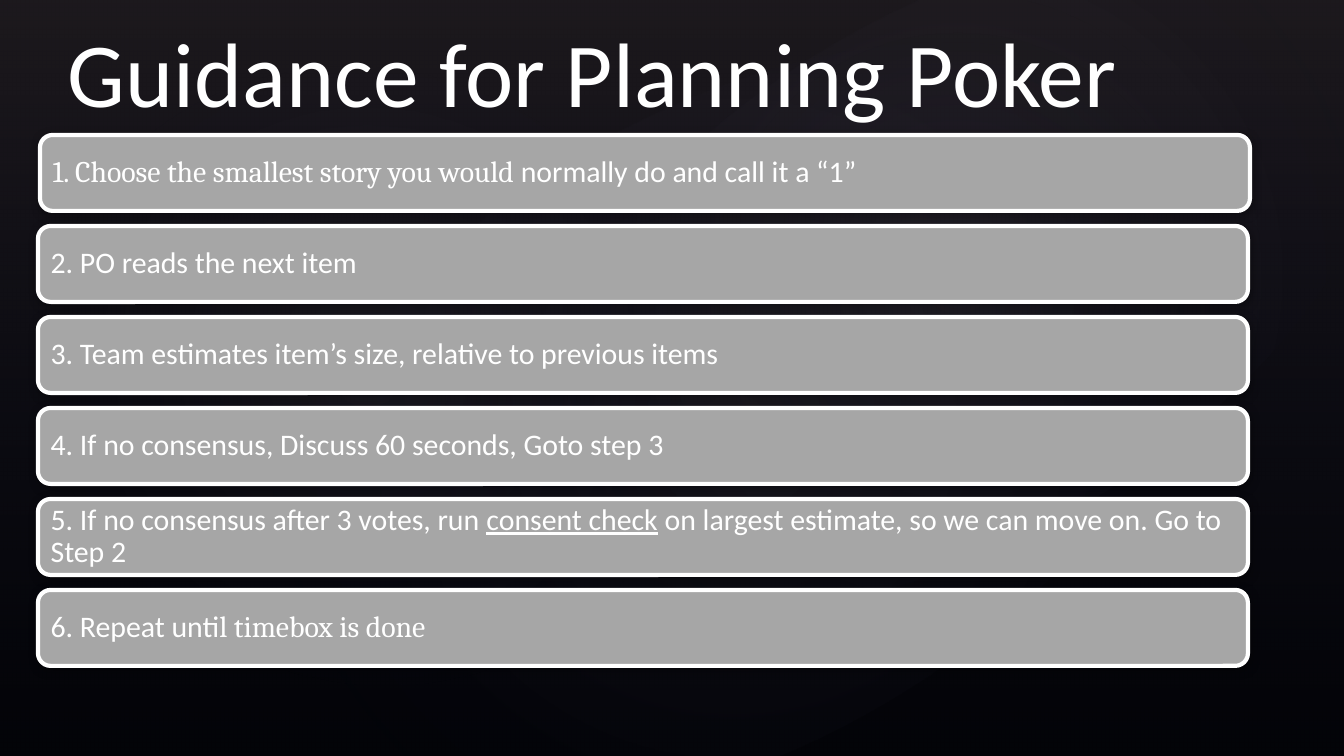
"""Build the slide with six steps of guidance for planning poker."""
from lxml import etree
from pptx import Presentation
from pptx.dml.color import RGBColor
from pptx.enum.shapes import MSO_SHAPE as Shape
from pptx.enum.text import MSO_ANCHOR as Anchor, PP_ALIGN as Align
from pptx.oxml import parse_xml
from pptx.oxml.ns import nsdecls, qn
from pptx.util import Emu, Pt

WHITE = RGBColor(0xFF, 0xFF, 0xFF)
GREY = RGBColor(0xA6, 0xA6, 0xA6)
BLACK = RGBColor(0, 0, 0)
SCALE = 9144000 / 1344
SERIF = {"name": "Cambria"}
SANS = {"name": "Calibri"}
UNDERLINED = {"name": "Calibri", "underline": True}


def px(*lengths):
    return [Emu(round(length * SCALE)) for length in lengths]


def add_glow(kind, place, stops, direction, angle=0):
    glow = page.shapes.add_shape(kind, *px(*place))
    glow.rotation = angle
    glow.shadow.inherit = False
    glow.line.fill.background()
    marks = "".join(
        f'<a:gs pos="{at * 1000}"><a:srgbClr val="{color}">'
        f'<a:alpha val="{alpha * 1000}"/></a:srgbClr></a:gs>'
        for at, color, alpha in stops)
    fill = parse_xml(f'<a:gradFill {nsdecls("a")} rotWithShape="1">'
                     f'<a:gsLst>{marks}</a:gsLst>{direction}</a:gradFill>')
    glow.element.spPr.find(qn("a:prstGeom")).addnext(fill)


deck = Presentation()
deck.slide_width, deck.slide_height = px(1344, 756)
page = deck.slides.add_slide(deck.slide_layouts[6])
page.background.fill.solid()
page.background.fill.fore_color.rgb = BLACK

add_glow(Shape.RECTANGLE, (0, 0, 1344, 756),
         [(0, "504652", 36), (100, "242852", 10)], '<a:lin ang="5400000" scaled="0"/>')
radial = ('<a:path path="circle"><a:fillToRect l="50000" t="50000" '
          'r="50000" b="50000"/></a:path>')
for place, angle, alpha in [
    ((202, 114, 1064, 629), 328.7, 7),
    ((62, 46, 610, 659), 294.3, 8),
    ((481, 13, 953, 524), 328.7, 8),
]:
    add_glow(Shape.OVAL, place, [(0, "C4BCC6", alpha), (58, "242852", 0)], radial, angle)

steps = [
    [("1. Choose the smallest story you would ", SERIF),
     ("normally do and call it a “1”", SANS)],
    [("2. PO reads the next item", SANS)],
    [("3. Team estimates item’s size, relative to previous items", SANS)],
    [("4. If no consensus, Discuss 60 seconds, Goto step 3", SANS)],
    [("5. If no consensus after 3 votes, run ", SANS),
     ("consent check", UNDERLINED),
     (" on largest estimate, so we can move on. Go to Step 2", SANS)],
    [("6. Repeat unti", SANS), ("l timebox is done", SERIF)],
]
texts = []
for row, spans in enumerate(steps):
    left = 38 if row else 40
    bar = page.shapes.add_shape(Shape.ROUNDED_RECTANGLE, *px(left, 135 + 91 * row, 1210, 76))
    bar.fill.solid()
    bar.fill.fore_color.rgb = GREY
    bar.line.color.rgb = WHITE
    bar.line.width = Pt(2.25)
    bar.shadow.inherit = False
    effects = bar.element.spPr.find(qn("a:effectLst"))
    shadow = etree.SubElement(effects, qn("a:outerShdw"), blurRad=str(Pt(5)),
                              dist=str(Pt(1)), dir="5400000", rotWithShape="0")
    color = etree.SubElement(shadow, qn("a:srgbClr"), val="000000")
    etree.SubElement(color, qn("a:alpha"), val="32000")
    texts.append((bar, spans, 16, 0.9, Anchor.MIDDLE, 9, 9))

title = page.shapes.add_textbox(*px(55, 43, 1289, 83))
texts.append((title, [("Guidance for Planning Poker", SANS)], 49, 1.0, Anchor.BOTTOM, 13, 0))

for box, spans, size, spacing, anchor, side, edge in texts:
    frame = box.text_frame
    side, edge = px(side, edge)
    for key, value in {"word_wrap": True, "vertical_anchor": anchor,
                       "margin_left": side, "margin_right": side,
                       "margin_top": edge, "margin_bottom": edge}.items():
        setattr(frame, key, value)
    para = frame.paragraphs[0]
    para.alignment = Align.LEFT
    para.line_spacing = spacing
    for text, look in spans:
        span = para.add_run()
        span.text = text
        span.font.color.rgb = WHITE
        for key, value in {"size": Pt(size), **look}.items():
            setattr(span.font, key, value)

deck.save("out.pptx")
